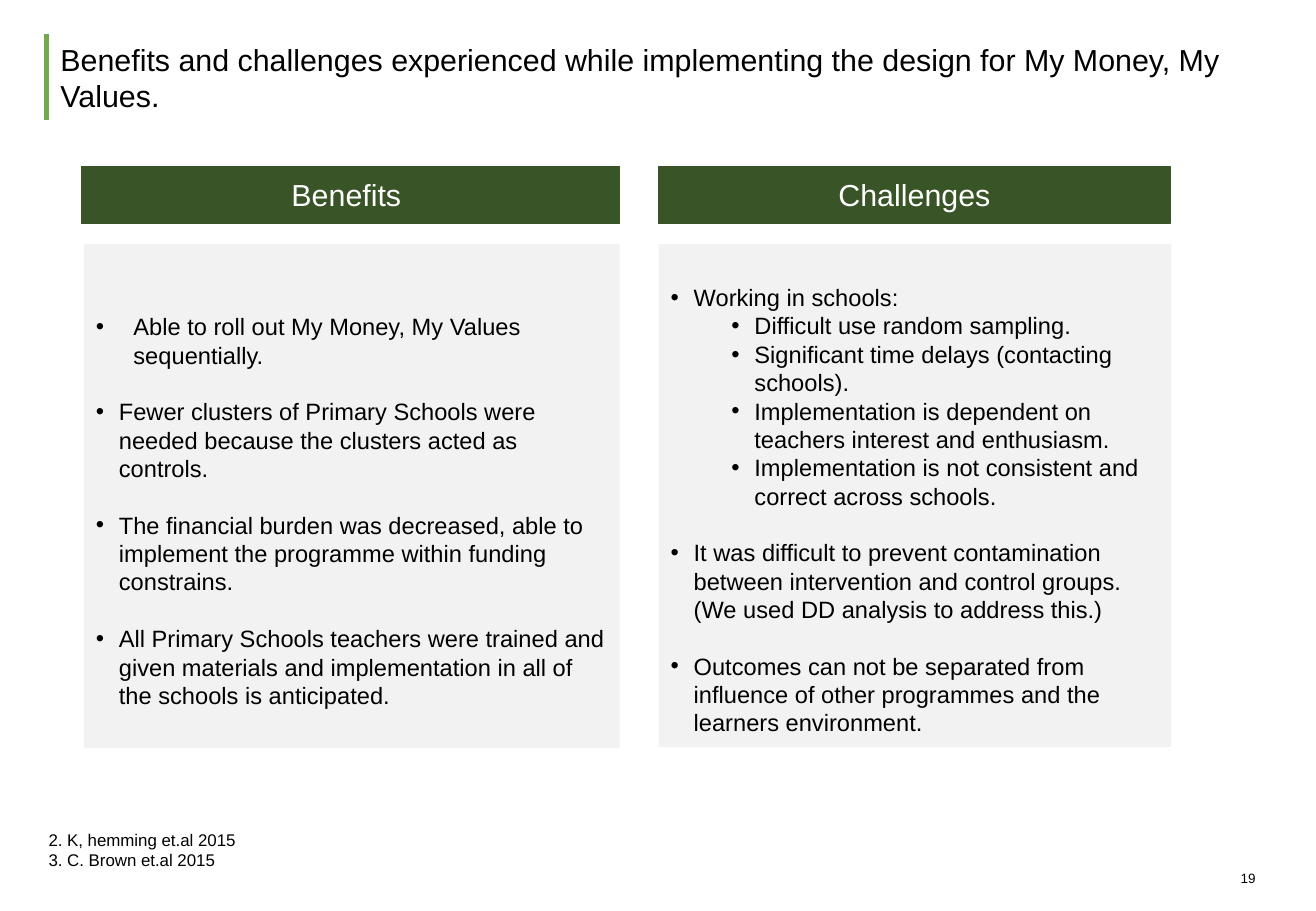
from lxml import etree
from pptx import Presentation
from pptx.dml.color import RGBColor
from pptx.enum.shapes import MSO_CONNECTOR, MSO_SHAPE
from pptx.enum.text import MSO_ANCHOR, PP_ALIGN
from pptx.oxml.ns import qn
from pptx.util import Inches, Pt

RECT, STRAIGHT = MSO_SHAPE.RECTANGLE, MSO_CONNECTOR.STRAIGHT
TOP, MIDDLE, BOTTOM = MSO_ANCHOR.TOP, MSO_ANCHOR.MIDDLE, MSO_ANCHOR.BOTTOM
LEFT, CENTER = PP_ALIGN.LEFT, PP_ALIGN.CENTER
COLORS = {"accent": "72A84E", "header": "395427", "panel": "F2F2F2",
          "text": "000000", "inverse": "FFFFFF"}
HEADER_ROW, HEADER_ROWS = 18.27, 6.27
PANEL_ROW = 26.8
GAP = 16.8

BENEFITS = [
    ("Able to roll out My Money, My Values sequentially.", 0, 0.31, 0),
    ("Fewer clusters of Primary Schools were needed because the clusters acted as controls.", 0, 0.19, GAP),
    ("The financial burden was decreased, able to implement the programme within funding constrains.", 0, 0.19, GAP),
    ("All Primary Schools teachers were trained and given materials and implementation in all of the schools is anticipated.", 0, 0.19, GAP),
]
CHALLENGES = [
    ("Working in schools:", 0, 0.19, 0),
    ("Difficult use random sampling.", 1, 0.19, 0),
    ("Significant time delays (contacting schools).", 1, 0.19, 0),
    ("Implementation is dependent on teachers interest and enthusiasm.", 1, 0.19, 0),
    ("Implementation is not consistent and correct across schools.", 1, 0.19, 0),
    ("It was difficult to prevent contamination between intervention and control groups. (We used DD analysis to address this.)", 0, 0.19, GAP),
    ("Outcomes can not be separated from influence of other programmes and the learners environment.", 0, 0.19, GAP),
]


class Deck:
    font = "Arial"
    columns = rows = 100

    def __init__(self, width, height):
        self.prs = Presentation()
        self.prs.slide_width, self.prs.slide_height = Inches(width), Inches(height)
        self.s = self.prs.slides.add_slide(self.prs.slide_layouts[6])

    def x(self, column):
        return round(self.prs.slide_width * column / self.columns)

    def y(self, row):
        return round(self.prs.slide_height * row / self.rows)

    def box(self, col, row, cols, rows):
        return self.x(col), self.y(row), self.x(cols), self.y(rows)

    def color(self, name):
        return RGBColor.from_string(COLORS[name])

    def frame(self, sp, anchor, inset=(0.1, 0.05)):
        tf = sp.text_frame
        tf.word_wrap = True
        tf.vertical_anchor = anchor
        tf.margin_left = tf.margin_right = Inches(inset[0])
        tf.margin_top = tf.margin_bottom = Inches(inset[1])
        return tf

    def paragraph(self, tf, text, size, pitch, color="text", align=LEFT):
        p = tf.paragraphs[0] if not tf.paragraphs[0].runs else tf.add_paragraph()
        p.alignment = align
        p.line_spacing = Pt(pitch)
        r = p.add_run()
        r.text = text
        r.font.name, r.font.size = self.font, Pt(size)
        r.font.color.rgb = self.color(color)
        return p

    def bullet(self, tf, text, level, indent, gap):
        p = self.paragraph(tf, text, 14, GAP)
        p.level = level
        if gap:
            p.space_before = Pt(gap)
        pPr = p._p.get_or_add_pPr()
        pPr.set("marL", str(Inches(indent + level * 0.5)))
        pPr.set("indent", str(-Inches(indent)))
        etree.SubElement(pPr, qn("a:buFont")).set("typeface", self.font)
        etree.SubElement(pPr, qn("a:buChar")).set("char", "•")

    def text(self, place, lines, size, pitch, anchor, inset=(0, 0)):
        tf = self.frame(self.s.shapes.add_textbox(*self.box(*place)), anchor, inset)
        for line in lines:
            self.paragraph(tf, line, size, pitch)

    def rect(self, place, fill):
        sp = self.s.shapes.add_shape(RECT, *self.box(*place))
        sp.shadow.inherit = False
        sp.fill.solid()
        sp.fill.fore_color.rgb = self.color(fill)
        sp.line.fill.background()
        return sp

    def header(self, col, cols, text):
        sp = self.rect((col, HEADER_ROW, cols, HEADER_ROWS), "header")
        sp.line.color.rgb = self.color("header")
        sp.line.width = Pt(0.75)
        self.paragraph(self.frame(sp, MIDDLE), text, 18, 21.3, "inverse", CENTER)

    def panel(self, col, cols, rows, top, items):
        sp = self.rect((col, PANEL_ROW, cols, rows), "panel")
        tf = self.frame(sp, TOP)
        tf.margin_top = Inches(top)
        for item in items:
            self.bullet(tf, *item)

    def rule(self, col, row, end_row):
        c = self.s.shapes.add_connector(
            STRAIGHT, self.x(col), self.y(row), self.x(col), self.y(end_row))
        c.line.color.rgb = self.color("accent")
        c.line.width = Pt(3)
        etree.SubElement(c._element.spPr, qn("a:effectLst"))


def main():
    deck = Deck(10.83, 7.5)
    deck.rule(3.51, 3.73, 13.2)
    deck.text((3.69, 3.87, 92.8, 9.33),
              ["Benefits and challenges experienced while implementing the design for My Money, My Values."],
              18, 21.3, MIDDLE, (0.1, 0.05))
    deck.panel(6.37, 40.72, 55.33, 0.56, BENEFITS)
    deck.panel(50.05, 38.97, 55.2, 0.32, CHALLENGES)
    deck.header(6.19, 40.9, "Benefits ")
    deck.header(50.05, 38.87, "Challenges")
    deck.text((3.69, 89.87, 70.91, 5.67),
              ["2. K, hemming et.al 2015", "3. C. Brown et.al 2015"], 10, 11.85, BOTTOM)
    deck.text((94.28, 95.6, 5.36, 1.73), ["19"], 8, 9.5, BOTTOM)
    deck.prs.save("out.pptx")


if __name__ == "__main__":
    main()
